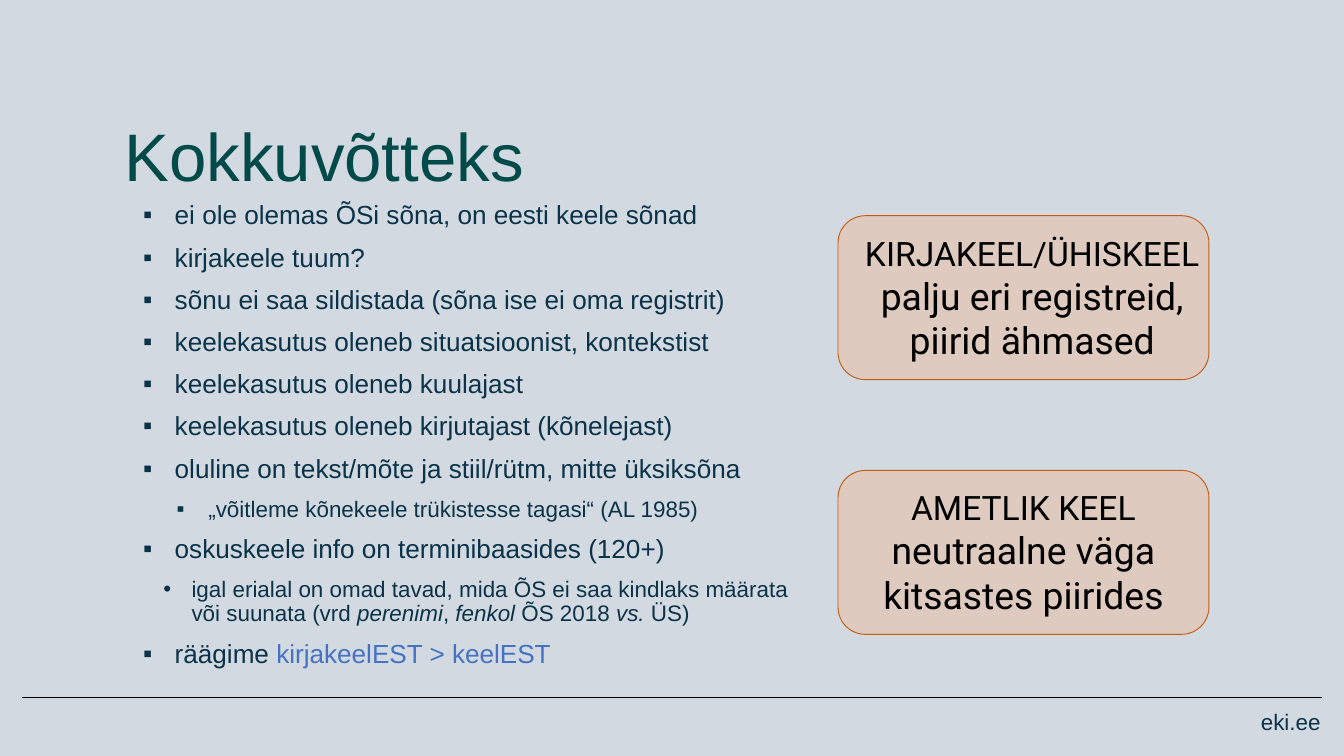
from dataclasses import dataclass

from lxml.etree import SubElement
from pptx import Presentation
from pptx.dml.color import RGBColor
from pptx.enum.shapes import MSO_CONNECTOR, MSO_SHAPE
from pptx.enum.text import MSO_ANCHOR, MSO_AUTO_SIZE, PP_ALIGN
from pptx.oxml.ns import qn
from pptx.util import Inches, Pt


@dataclass(frozen=True)
class Theme:
    background: str = "D3D9E1"
    ink: str = "0A3349"
    title: str = "004A4A"
    accent: str = "4472C4"
    card_fill: str = "F4B081"
    card_line: str = "C55A11"
    black: str = "000000"
    font: str = "Arial"
    card_font: str = "Roboto"
    title_size: int = 72
    item_size: int = 28
    small_size: int = 24
    heading_size: int = 36
    card_size: int = 40


THEME = Theme()
rgb = RGBColor.from_string


def write(paragraph, text, size, color=THEME.ink, font=THEME.font, italic=None,
          align=PP_ALIGN.LEFT, spacing=0.9, before=0):
    """Append text to a paragraph as one run per line, with its format."""
    paragraph.alignment = align
    paragraph.line_spacing = spacing
    paragraph.space_before = Pt(before)
    for number, line in enumerate(text.split("\n")):
        if number:
            paragraph.add_line_break()
        if line:
            run = paragraph.add_run()
            run.text = line
            run.font.name, run.font.size = font, Pt(size)
            run.font.color.rgb, run.font.italic = rgb(color), italic


def set_bullet(paragraph, char, left, hanging):
    properties = paragraph._p.get_or_add_pPr()
    properties.set("marL", str(Inches(left)))
    properties.set("indent", str(-Inches(hanging)))
    color = SubElement(properties, qn("a:buClr"))
    SubElement(color, qn("a:srgbClr"), val=THEME.ink)
    SubElement(properties, qn("a:buFont"), typeface=THEME.font)
    SubElement(properties, qn("a:buChar"), char=char)


prs = Presentation()
prs.slide_width, prs.slide_height = Inches(20), Inches(11.25)
slide = prs.slides.add_slide(prs.slide_layouts[1])
slide.background.fill.solid()
slide.background.fill.fore_color.rgb = rgb(THEME.background)

# Footer
rule = slide.shapes.add_connector(MSO_CONNECTOR.STRAIGHT, Inches(0.33), Inches(10.38),
                                  Inches(19.67), Inches(10.38))
rule.line.color.rgb, rule.line.width = rgb(THEME.black), Pt(1)
SubElement(rule._element.spPr, qn("a:effectLst"))
site = slide.shapes.add_textbox(Inches(16.25), Inches(10.54), Inches(3.5), Inches(0.58))
site.text_frame.word_wrap = True
write(site.text_frame.paragraphs[0], "eki.ee", THEME.small_size, align=PP_ALIGN.RIGHT)

# Title and list
title, body = slide.shapes.title, slide.placeholders[1]
for holder, top, height, anchor in ((title, 1.63, 1.33, MSO_ANCHOR.BOTTOM),
                                    (body, 2.96, 7.4, MSO_ANCHOR.TOP)):
    holder.left, holder.top = Inches(1.75), Inches(top)
    holder.width, holder.height = Inches(16.5), Inches(height)
    holder.text_frame.word_wrap = True
    holder.text_frame.auto_size = MSO_AUTO_SIZE.NONE
    holder.text_frame.vertical_anchor = anchor
write(title.text_frame.paragraphs[0], "Kokkuvõtteks", THEME.title_size, THEME.title)

# Kind of item: level, bullet, left indent, hanging indent, type size
KINDS = {
    "main": (0, "▪", 0.75, 0.47, THEME.item_size),
    "quote": (1, "▪", 1.25, 0.47, THEME.small_size),
    "detail": (1, "•", 1, 0.42, THEME.small_size),
}
ITALIC = {"italic": True}
items = [
    ("main", [("ei ole olemas ÕSi sõna, on eesti keele sõnad", {})]),
    ("main", [("kirjakeele tuum?", {})]),
    ("main", [("sõnu ei saa sildistada (sõna ise ei oma registrit)", {})]),
    ("main", [("keelekasutus oleneb situatsioonist, kontekstist", {})]),
    ("main", [("keelekasutus oleneb kuulajast", {})]),
    ("main", [("keelekasutus oleneb kirjutajast (kõnelejast)", {})]),
    ("main", [("oluline on tekst/mõte ja stiil/rütm, mitte üksiksõna", {})]),
    ("quote", [("„võitleme kõnekeele trükistesse tagasi“ (AL 1985)", {})]),
    ("main", [("oskuskeele info on terminibaasides (120+)", {})]),
    ("detail", [("igal erialal on omad tavad, mida ÕS ei saa kindlaks määrata\n"
                 "või suunata (vrd ", {}), ("perenimi", ITALIC), (", ", {}),
                ("fenkol", ITALIC), (" ÕS 2018 ", {}), ("vs.", ITALIC), (" ÜS)", {})]),
    ("main", [("räägime ", {}), ("kirjakeelEST > keelEST", {"color": THEME.accent})]),
]
for number, (kind, parts) in enumerate(items):
    frame = body.text_frame
    item = frame.add_paragraph() if number else frame.paragraphs[0]
    level, char, left, hanging, size = KINDS[kind]
    item.level = level
    set_bullet(item, char, left, hanging)
    for text, style in parts:
        write(item, text, size, before=15 if number else 0, **style)

# Cards: top, label left, label width, heading, description
cards = [
    (3.21, 12.6, 5.52, "KIRJAKEEL/ÜHISKEEL\n", "palju eri registreid,\npiirid ähmased"),
    (7, 12.93, 4.6, "AMETLIK KEEL\n", "neutraalne väga kitsastes piirides"),
]
for top, label_left, label_width, heading, description in cards:
    card = slide.shapes.add_shape(MSO_SHAPE.ROUNDED_RECTANGLE, Inches(12.47), Inches(top),
                                  Inches(5.52), Inches(2.44))
    card.shadow.inherit = False
    card.fill.solid()
    card.fill.fore_color.rgb = rgb(THEME.card_fill)
    fill_color = card._element.spPr.find(qn("a:solidFill"))[0]
    SubElement(fill_color, qn("a:alpha"), val="36000")
    card.line.color.rgb, card.line.width = rgb(THEME.card_line), Pt(1)

    label = slide.shapes.add_textbox(Inches(label_left), Inches(top + 0.2),
                                     Inches(label_width), Inches(2.05))
    label.text_frame.word_wrap = True
    label.text_frame.auto_size = MSO_AUTO_SIZE.SHAPE_TO_FIT_TEXT
    for text, size in ((heading, THEME.heading_size), (description, THEME.card_size)):
        write(label.text_frame.paragraphs[0], text, size, THEME.black, THEME.card_font,
              align=PP_ALIGN.CENTER, spacing=1.0)

prs.save("out.pptx")
